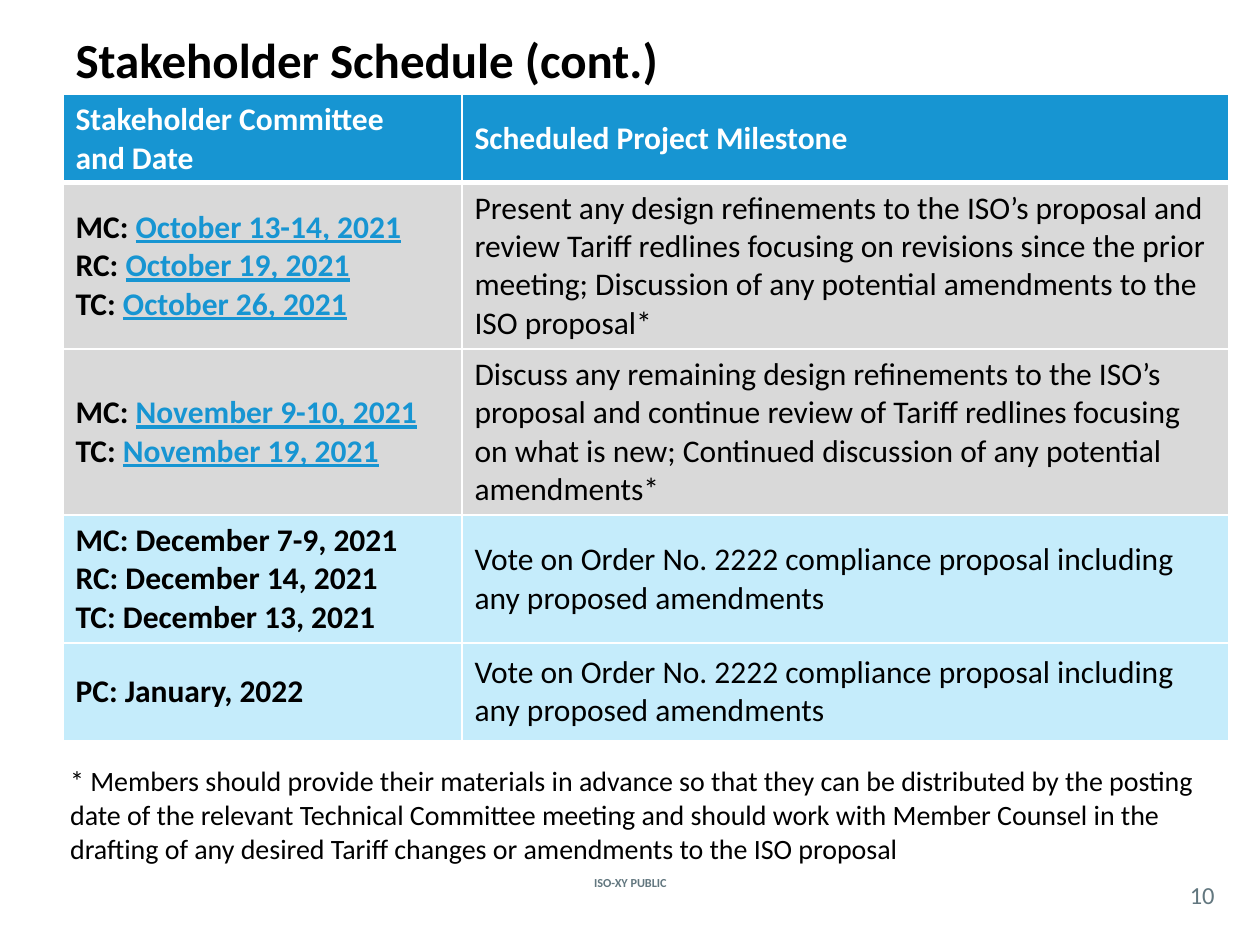
from lxml.etree import SubElement
from pptx import Presentation
from pptx.dml.color import RGBColor
from pptx.enum.text import MSO_ANCHOR as ANCHOR, PP_ALIGN as ALIGN
from pptx.oxml.ns import qn
from pptx.util import Pt

FONT = "Calibri"
COLORS = {"black": "000000", "white": "FFFFFF", "blue": "1795D2",
          "gray": "D9D9D9", "light": "C5ECFB", "slate": "62777F"}
COLUMNS = [228, 438]
VOTE = "Vote on Order No. 2222 compliance proposal including any proposed amendments"
HEADER = (["Stakeholder Committee", "and Date"], "Scheduled Project Milestone")
MILESTONES = [
    (95, "gray",
     [("MC: ", "October 13-14, 2021"), ("RC: ", "October 19, 2021"),
      ("TC: ", "October 26, 2021")],
     "Present any design refinements to the ISO’s proposal and review Tariff "
     "redlines focusing on revisions since the prior meeting; Discussion of any "
     "potential amendments to the ISO proposal*"),
    (95, "gray",
     [("MC: ", "November 9-10, 2021"), ("TC: ", "November 19, 2021")],
     "Discuss any remaining design refinements to the ISO’s proposal and continue "
     "review of Tariff redlines focusing on what is new; Continued discussion of "
     "any potential amendments*"),
    (73, "light",
     [("MC: December 7-9, 2021",), ("RC: December 14, 2021",),
      ("TC: December 13, 2021",)], VOTE),
    (56, "light", [("PC: January, 2022",)], VOTE),
]
FOOTNOTE = ("* Members should provide their materials in advance so that they can be "
            "distributed by the posting date of the relevant Technical Committee "
            "meeting and should work with Member Counsel in the drafting of any "
            "desired Tariff changes or amendments to the ISO proposal")


def rgb(name):
    return RGBColor.from_string(COLORS[name])


def add_run(p, text, size, color="black", bold=False, underline=False):
    r = p.add_run()
    r.text = text
    r.font.name, r.font.size, r.font.bold = FONT, Pt(size), bold
    r.font.color.rgb = rgb(color)
    if underline:
        r.font.underline = True


def place(sp, box):
    sp.left, sp.top, sp.width, sp.height = [Pt(v) for v in box]


def add_title(s, box, text):
    sp = s.shapes.title
    place(sp, box)
    sp.text_frame.vertical_anchor = ANCHOR.MIDDLE
    p = sp.text_frame.paragraphs[0]
    p.alignment = ALIGN.LEFT
    add_run(p, text, 28, bold=True)


def add_text(s, box, text, size, color, bold=False, align=ALIGN.LEFT,
             anchor=ANCHOR.TOP, inset=None):
    tf = s.shapes.add_textbox(*[Pt(v) for v in box]).text_frame
    tf.word_wrap = True
    tf.vertical_anchor = anchor
    if inset is not None:
        tf.margin_left = tf.margin_right = Pt(inset)
        tf.margin_top = tf.margin_bottom = Pt(inset)
    p = tf.paragraphs[0]
    p.alignment = align
    add_run(p, text, size, color, bold)


def set_borders(cell, bottom):
    tcPr = cell._tc.get_or_add_tcPr()
    for side, width in (("L", 1), ("R", 1), ("T", 1), ("B", bottom)):
        ln = SubElement(tcPr, qn(f"a:ln{side}"), w=str(Pt(width)))
        fill = SubElement(ln, qn("a:solidFill"))
        SubElement(fill, qn("a:srgbClr"), val=COLORS["white"])


def fill_cell(cell, lines, fill, color="black", bold=False, bottom=1):
    set_borders(cell, bottom)
    cell.fill.solid()
    cell.fill.fore_color.rgb = rgb(fill)
    cell.vertical_anchor = ANCHOR.MIDDLE
    tf = cell.text_frame
    for i, (label, *linked) in enumerate(lines):
        p = tf.paragraphs[0] if i == 0 else tf.add_paragraph()
        add_run(p, label, 18, color, bold)
        for date in linked:
            add_run(p, date, 18, "blue", bold, underline=True)


def add_schedule(s, left, top):
    heights = [50] + [row[0] for row in MILESTONES]
    table = s.shapes.add_table(len(heights), len(COLUMNS), Pt(left), Pt(top),
                               Pt(sum(COLUMNS)), Pt(sum(heights))).table
    for column, width in zip(table.columns, COLUMNS):
        column.width = Pt(width)
    for row, height in zip(table.rows, heights):
        row.height = Pt(height)
    committee, milestone = HEADER
    for col, lines in enumerate((committee, [milestone])):
        fill_cell(table.cell(0, col), [(t,) for t in lines], "blue", "white",
                  bold=True, bottom=3)
    for i, (_, fill, dates, text) in enumerate(MILESTONES, 1):
        fill_cell(table.cell(i, 0), dates, fill, bold=True)
        fill_cell(table.cell(i, 1), [(text,)], fill)


def main():
    prs = Presentation()
    prs.slide_width, prs.slide_height = Pt(720), Pt(540)
    s = prs.slides.add_slide(prs.slide_layouts[5])
    add_text(s, (307.5, 498, 105.5, 12.5), "ISO-XY PUBLIC", 7, "slate", bold=True,
             align=ALIGN.CENTER, anchor=ANCHOR.MIDDLE)
    add_title(s, (36, 12.5, 648, 42), "Stakeholder Schedule (cont.)")
    add_text(s, (672, 501, 30, 21), "10", 14, "slate", align=ALIGN.CENTER,
             anchor=ANCHOR.MIDDLE, inset=0)
    add_schedule(s, 36, 54)
    add_text(s, (33, 433, 666, 65.5), FOOTNOTE, 16, "black")
    prs.save("out.pptx")


if __name__ == "__main__":
    main()
